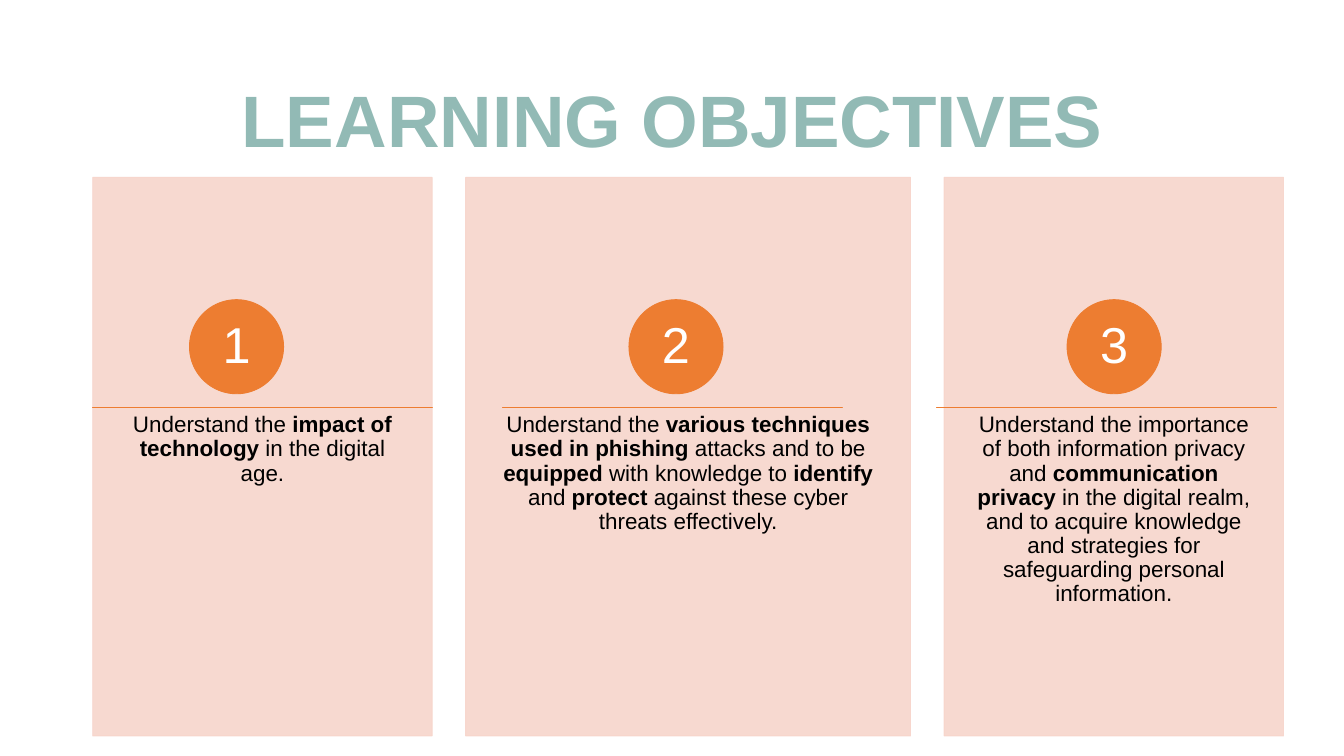
from dataclasses import dataclass
from typing import Any

from lxml import etree
from pptx import Presentation
from pptx.dml.color import RGBColor
from pptx.enum.shapes import MSO_SHAPE
from pptx.enum.text import MSO_ANCHOR, PP_ALIGN
from pptx.oxml.ns import qn
from pptx.util import Emu, Pt

RECT = MSO_SHAPE.RECTANGLE
OVAL = MSO_SHAPE.OVAL
TOP = MSO_ANCHOR.TOP
MIDDLE = MSO_ANCHOR.MIDDLE
CENTER = PP_ALIGN.CENTER
SCALE = 9144


@dataclass(frozen=True)
class Theme:
    font: str = "Arial"
    title: str = "92BAB5"
    panel: str = "F7D5CB"
    accent: str = "ED7D31"
    body: str = "000000"
    digit: str = "FFFFFF"
    title_size: int = 78
    body_size: int = 24
    digit_size: int = 54
    opacity: int = 90


@dataclass(frozen=True)
class Box:
    x: int
    y: int
    w: int
    h: int


@dataclass(frozen=True)
class Phrase:
    text: str
    bold: bool = False


@dataclass(frozen=True)
class Card:
    x: int
    w: int
    disc_x: int
    rule_x: int
    phrases: tuple[Phrase, ...]


THEME = Theme()
CARDS = (
    Card(138, 505, 282, 138, (
        Phrase("Understand the "),
        Phrase("impact of technology ", True),
        Phrase("in the digital age."),
    )),
    Card(693, 662, 936, 748, (
        Phrase("Understand the "),
        Phrase("various techniques used in phishing ", True),
        Phrase("attacks and to be "),
        Phrase("equipped", True),
        Phrase(" with knowledge to "),
        Phrase("identify ", True),
        Phrase("and "),
        Phrase("protect ", True),
        Phrase("against these cyber threats effectively."),
    )),
    Card(1405, 505, 1588, 1394, (
        Phrase("Understand the importance of both information privacy and "),
        Phrase("communication privacy ", True),
        Phrase("in the digital realm, and to acquire knowledge and "
               "strategies for safeguarding personal information."),
    )),
)


def px(n: int) -> Emu:
    return Emu(n * SCALE)


def place(box: Box) -> tuple[Emu, Emu, Emu, Emu]:
    return px(box.x), px(box.y), px(box.w), px(box.h)


def fade(color: Any, opacity: int) -> None:
    alpha = etree.SubElement(color, qn("a:alpha"))
    alpha.set("val", str(opacity * 1000))


def draw_shape(slide: Any, kind: Any, box: Box, color: str, opacity: int = 100) -> None:
    shape = slide.shapes.add_shape(kind, *place(box))
    shape.shadow.inherit = False
    shape.fill.solid()
    shape.fill.fore_color.rgb = RGBColor.from_string(color)
    shape.line.color.rgb = RGBColor.from_string(color)
    shape.line.width = Pt(1)
    if opacity < 100:
        for node in shape.element.spPr.iter(qn("a:srgbClr")):
            fade(node, opacity)


def draw_text(slide: Any, box: Box, phrases: tuple[Phrase, ...], size: int,
              color: str, pad: tuple[int, int], anchor: Any) -> None:
    frame = slide.shapes.add_textbox(*place(box)).text_frame
    frame.word_wrap = True
    frame.vertical_anchor = anchor
    frame.margin_left = frame.margin_right = px(pad[0])
    frame.margin_top = frame.margin_bottom = px(pad[1])
    para = frame.paragraphs[0]
    para.alignment = CENTER
    para.line_spacing = 0.9
    for phrase in phrases:
        run = para.add_run()
        run.text = phrase.text
        run.font.name = THEME.font
        run.font.size = Pt(size)
        run.font.bold = phrase.bold
        run.font.color.rgb = RGBColor.from_string(color)


def draw_card(slide: Any, card: Card, num: int) -> None:
    draw_shape(slide, RECT, Box(card.x, 264, card.w, 831), THEME.panel, THEME.opacity)
    draw_text(slide, Box(card.x, 579, card.w, 498), card.phrases,
              THEME.body_size, THEME.body, (39, 36), TOP)
    draw_shape(slide, OVAL, Box(card.disc_x, 446, 140, 140), THEME.accent)
    draw_text(slide, Box(card.disc_x + 20, 466, 100, 100), (Phrase(str(num)),),
              THEME.digit_size, THEME.digit, (11, 1), MIDDLE)
    draw_shape(slide, RECT, Box(card.rule_x, 606, 505, 0), THEME.accent)


def main() -> None:
    deck = Presentation()
    deck.slide_width, deck.slide_height = px(2000), px(1125)
    slide = deck.slides.add_slide(deck.slide_layouts[6])
    draw_text(slide, Box(138, 91, 1725, 186), (Phrase("LEARNING OBJECTIVES", True),),
              THEME.title_size, THEME.title, (10, 5), MIDDLE)
    for num, card in enumerate(CARDS, 1):
        draw_card(slide, card, num)
    deck.save("out.pptx")


if __name__ == "__main__":
    main()
